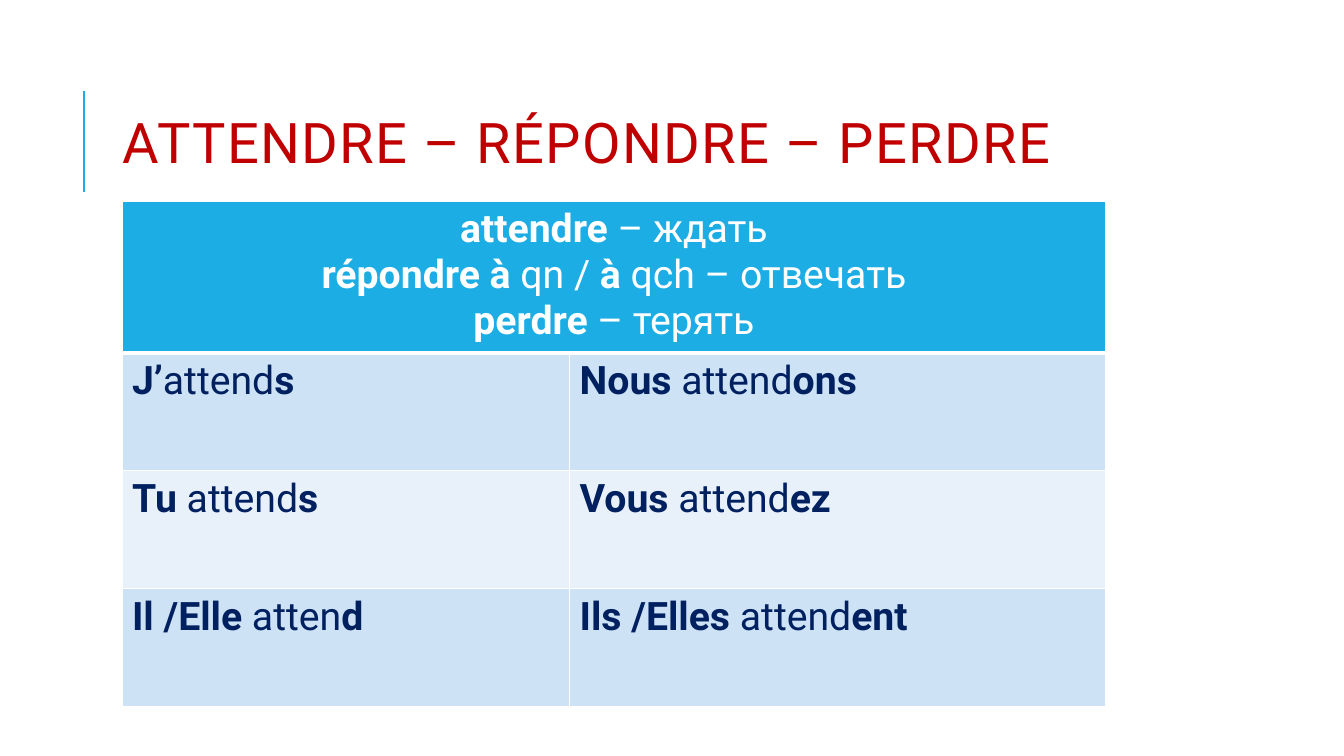
from lxml import etree
from pptx import Presentation
from pptx.dml.color import RGBColor
from pptx.enum import shapes, text
from pptx.oxml import ns
from pptx.util import Inches, Pt

FONT = "Roboto"
WHITE, BLUE, RED, NAVY = "FFFFFF", "1CADE4", "C00000", "002060"
BANDS = ["CDE3F5", "E8F1FA"]

TITLE = "ATTENDRE – RÉPONDRE – PERDRE"
HEADER = [
    [("attendre ", True), ("– ждать", False)],
    [("répondre à ", True), ("qn /", False), (" à ", True), ("qch – отвечать", False)],
    [("perdre", True), (" – терять", False)],
]
CONJUGATION = [
    [("J’", "attend", "s"), ("Nous ", "attend", "ons")],
    [("Tu ", "attend", "s"), ("Vous ", "attend", "ez")],
    [("Il /Elle ", "atten", "d"), ("Ils /Elles ", "attend", "ent")],
]
COLUMN_WIDTHS = [4.44, 5.32]
ROW_HEIGHTS = [1.46, 1.17, 1.17, 1.17]


def rgb(value):
    return RGBColor.from_string(value)


def style(paragraph, size, color):
    paragraph.font.name = FONT
    paragraph.font.size = Pt(size)
    paragraph.font.color.rgb = rgb(color)


def add_border(cell, side, points):
    properties = cell._tc.get_or_add_tcPr()
    line = etree.SubElement(properties, ns.qn("a:ln" + side), w=str(Pt(points)))
    fill = etree.SubElement(line, ns.qn("a:solidFill"))
    etree.SubElement(fill, ns.qn("a:srgbClr"), val=WHITE)


def format_cell(cell, color, top=1, bottom=1):
    for side, points in (("L", 1), ("R", 1), ("T", top), ("B", bottom)):
        add_border(cell, side, points)
    cell.fill.solid()
    cell.fill.fore_color.rgb = rgb(color)


def write_cell(cell, lines, color, alignment):
    for index, line in enumerate(lines):
        frame = cell.text_frame
        paragraph = frame.add_paragraph() if index else frame.paragraphs[0]
        paragraph.alignment = alignment
        style(paragraph, 28, color)
        for words, bold in line:
            run = paragraph.add_run()
            run.text = words
            run.font.bold = bold


def add_title(slide):
    accent = slide.shapes.add_connector(
        shapes.MSO_CONNECTOR.STRAIGHT, Inches(0.83), Inches(1.9), Inches(0.83), Inches(0.9))
    accent.line.color.rgb = rgb(BLUE)
    accent.line.width = Pt(1.5)
    etree.SubElement(accent._element.spPr, ns.qn("a:effectLst"))

    title = slide.shapes.add_textbox(Inches(1.12), Inches(0.64), Inches(10.63), Inches(1.64))
    frame = title.text_frame
    frame.word_wrap = True
    frame.vertical_anchor = text.MSO_ANCHOR.MIDDLE
    paragraph = frame.paragraphs[0]
    paragraph.line_spacing = 0.8
    style(paragraph, 40, RED)
    run = paragraph.add_run()
    run.text = TITLE
    run.font._element.set("spc", "100")


def add_conjugation_table(slide):
    frame = slide.shapes.add_table(
        len(ROW_HEIGHTS), len(COLUMN_WIDTHS), Inches(1.21), Inches(2),
        Inches(sum(COLUMN_WIDTHS)), Inches(sum(ROW_HEIGHTS)))
    table = frame.table
    for column, width in zip(table.columns, COLUMN_WIDTHS):
        column.width = Inches(width)
    for row, height in zip(table.rows, ROW_HEIGHTS):
        row.height = Inches(height)

    for cell in table.rows[0].cells:
        format_cell(cell, BLUE, bottom=3)
    header = table.cell(0, 0)
    header.merge(table.cell(0, 1))
    write_cell(header, HEADER, WHITE, text.PP_ALIGN.CENTER)

    for row, forms in enumerate(CONJUGATION, 1):
        for column, (pronoun, stem, ending) in enumerate(forms):
            cell = table.cell(row, column)
            format_cell(cell, BANDS[(row - 1) % 2], top=3 if row == 1 else 1)
            line = [(pronoun, True), (stem, False), (ending, True)]
            write_cell(cell, [line], NAVY, text.PP_ALIGN.LEFT)


def main():
    presentation = Presentation()
    presentation.slide_width = Inches(13.33)
    presentation.slide_height = Inches(7.5)
    slide = presentation.slides.add_slide(presentation.slide_layouts[6])
    add_title(slide)
    add_conjugation_table(slide)
    presentation.save("out.pptx")


if __name__ == "__main__":
    main()
